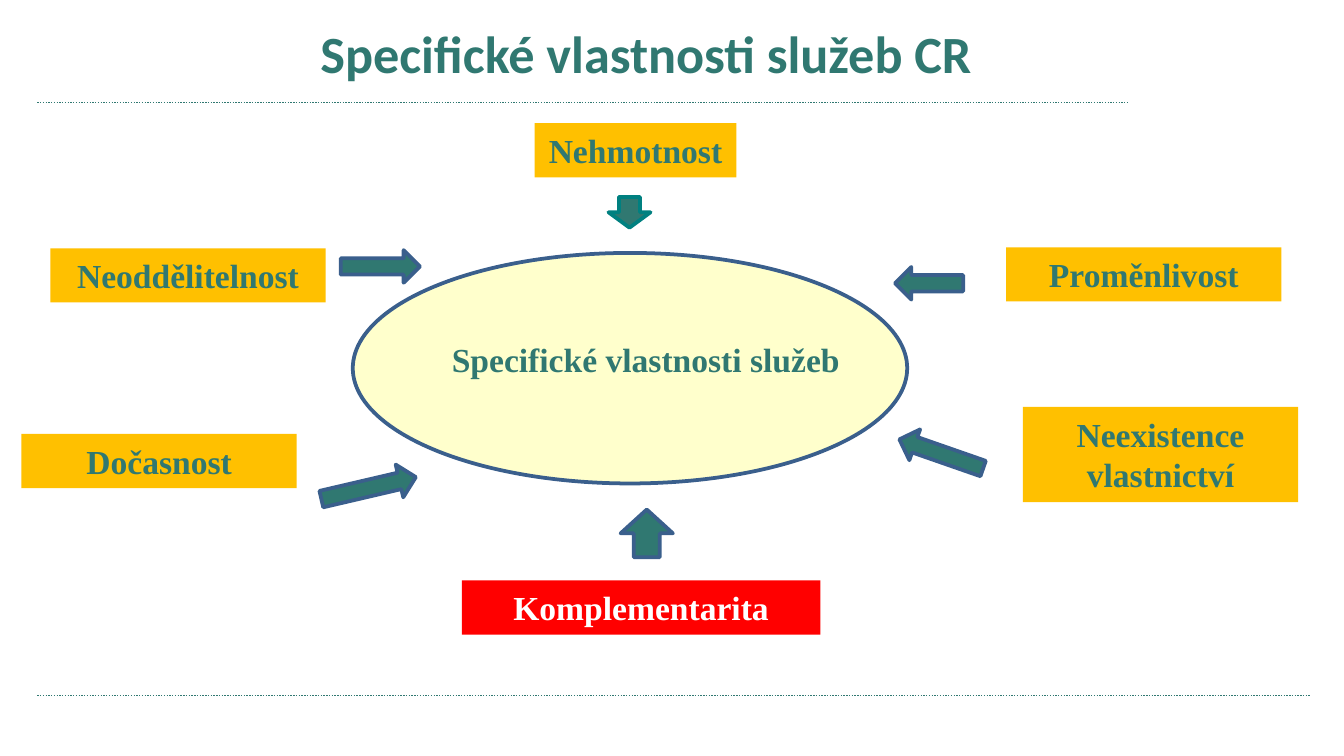
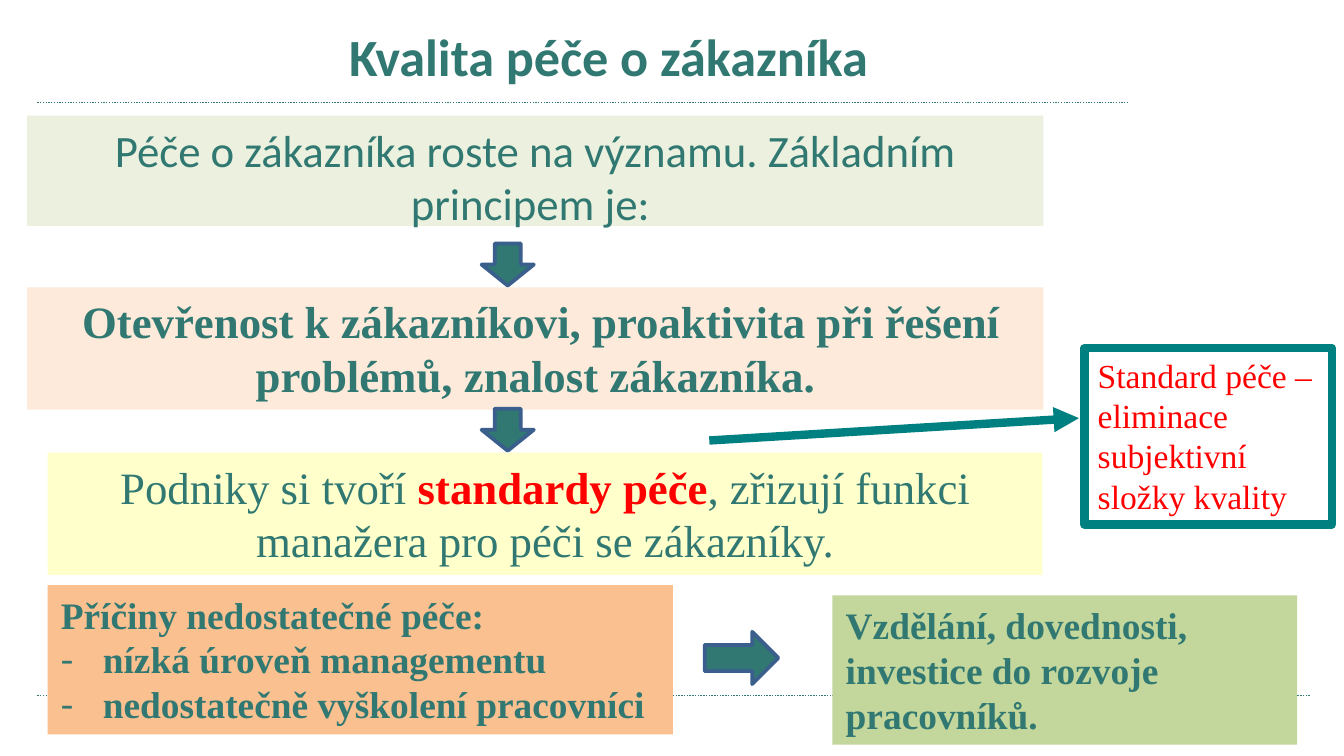
from lxml import etree
from pptx import Presentation
from pptx import util as u
from pptx.dml import color
from pptx.enum import dml, shapes, text
from pptx.oxml import ns

COLORS = {
    "green": "307871", "teal": "008080", "blue": "3A5F8C", "red": "FF0000",
    "white": "FFFFFF", "amber": "FFC000", "cream": "FFFFCC", "mint": "EBF1DE",
    "peach": "FDEADA", "orange": "FAC090", "lime": "C3D69B",
}
RGB = {name: color.RGBColor.from_string(value) for name, value in COLORS.items()}
SERIF, SANS = "Times New Roman", "Calibri"
CENTER, LEFT = text.PP_ALIGN.CENTER, text.PP_ALIGN.LEFT
SHAPE = shapes.MSO_SHAPE


def add_shape(page, kind, frame, fill=None, line=None, width=2, turn=0):
    shape = page.shapes.add_shape(kind, *(u.Pt(n) for n in frame))
    shape.shadow.inherit = False
    shape.rotation = turn
    if fill:
        shape.fill.solid()
        shape.fill.fore_color.rgb = RGB[fill]
    else:
        shape.fill.background()
    if line:
        shape.line.color.rgb = RGB[line]
        shape.line.width = u.Pt(width)
    else:
        shape.line.fill.background()
    return shape


def write(box, paragraphs, size, font=SERIF, align=CENTER, anchor=text.MSO_ANCHOR.TOP):
    """Each paragraph is a list of (words, colour, bold); a leading "-" makes it a bullet."""
    frame = box.text_frame
    frame.word_wrap = True
    frame.vertical_anchor = anchor
    for index, spans in enumerate(paragraphs):
        para = frame.paragraphs[0] if index == 0 else frame.add_paragraph()
        para.alignment = align
        if spans[0] == "-":
            spans = spans[1:]
            properties = para._p.get_or_add_pPr()
            properties.set("marL", str(u.Pt(22.5)))
            properties.set("indent", str(u.Pt(-22.5)))
            etree.SubElement(properties, ns.qn("a:buFont")).set("typeface", SERIF)
            etree.SubElement(properties, ns.qn("a:buChar")).set("char", "-")
        for words, ink, bold in spans:
            span = para.add_run()
            span.text = words
            span.font.name = font
            span.font.size = u.Pt(size)
            span.font.bold = bold
            span.font.color.rgb = RGB[ink]


deck = Presentation()
deck.slide_width, deck.slide_height = u.Pt(720), u.Pt(405)

# Shared frame: dotted rules and title
TITLES = [
    ("Specifické vlastnosti služeb CR", (145, 8, 402, 40)),
    ("Kvalita péče o zákazníka", (173, 10, 306, 40)),
]
pages = []
for title, frame in TITLES:
    page = deck.slides.add_slide(deck.slide_layouts[6])
    for right, y in [(604, 55), (702, 372.5)]:
        rule = page.shapes.add_connector(
            shapes.MSO_CONNECTOR.STRAIGHT, u.Pt(20), u.Pt(y), u.Pt(right), u.Pt(y))
        rule.line.color.rgb = RGB["green"]
        rule.line.width = u.Pt(0.75)
        rule.line.dash_style = dml.MSO_LINE.ROUND_DOT
        etree.SubElement(rule._element.spPr, ns.qn("a:effectLst"))
    box = page.shapes.add_textbox(*(u.Pt(n) for n in frame))
    write(box, [[(title, "green", True)]], 28, SANS, anchor=text.MSO_ANCHOR.MIDDLE)
    pages.append(page)
properties_page, care_page = pages

# Slide 1: properties around the central ellipse
add_shape(properties_page, SHAPE.OVAL, (189, 135.5, 297, 123.5), "cream", "blue")
box = properties_page.shapes.add_textbox(u.Pt(218), u.Pt(178), u.Pt(256), u.Pt(29))
write(box, [[("Specifické vlastnosti služeb", "green", True)]], 18)

PROPERTIES = [
    ("Nehmotnost", (286.5, 66, 108, 29), "amber", "green"),
    ("Neoddělitelnost", (27, 133, 147.5, 29), "amber", "green"),
    ("Proměnlivost", (539, 132.5, 147.5, 29), "amber", "green"),
    ("Dočasnost", (11.5, 232.5, 147.5, 29), "amber", "green"),
    ("Neexistence vlastnictví", (548, 218, 147.5, 51), "amber", "green"),
    ("Komplementarita", (247.5, 311, 192, 29), "red", "white"),
]
for name, frame, fill, ink in PROPERTIES:
    box = add_shape(properties_page, SHAPE.RECTANGLE, frame, fill)
    write(box, [[(name, ink, True)]], 18)

INWARD_ARROWS = [
    (SHAPE.DOWN_ARROW, (326, 105.5, 22.5, 16.5), "teal", 0),
    (SHAPE.RIGHT_ARROW, (182.5, 134, 42.5, 17.5), "blue", 0),
    (SHAPE.RIGHT_ARROW, (171.5, 252.5, 52, 18), "blue", -13.1),
    (SHAPE.LEFT_ARROW, (479.5, 143, 36.5, 17.5), "blue", 0),
    (SHAPE.LEFT_ARROW, (480.5, 234.5, 47.5, 17.5), "blue", 19.2),
    (SHAPE.UP_ARROW, (332.5, 273, 28, 25.5), "blue", 0),
]
for kind, frame, line, turn in INWARD_ARROWS:
    add_shape(properties_page, kind, frame, "green", line, turn=turn)

# Slide 2: steps of customer care
CARE_BOXES = [
    ((14.5, 62, 544.5, 59), "mint", 24, SANS, CENTER, [
        [("Péče o zákazníka roste na významu. Základním principem je: ", "green", False)]]),
    ((14.5, 154, 544.5, 65.5), "peach", 24, SERIF, CENTER, [
        [(" Otevřenost k zákazníkovi, proaktivita při řešení problémů, znalost zákazníka.",
          "green", True)]]),
    ((25.5, 242.5, 533, 65.5), "cream", 24, SERIF, CENTER, [
        [("Podniky si tvoří ", "green", False), ("standardy péče", "red", True),
         (", zřizují funkci manažera pro péči se zákazníky.", "green", False)]]),
    ((25.5, 313.5, 335, 80), "orange", 20, SERIF, LEFT, [
        [("Příčiny nedostatečné péče:", "green", True)],
        ["-", ("nízká úroveň managementu", "green", True)],
        ["-", ("nedostatečně vyškolení pracovníci", "green", True)]]),
    ((446, 319, 249, 80), "lime", 20, SERIF, LEFT, [
        [("Vzdělání, dovednosti, investice do rozvoje pracovníků.", "green", True)]]),
]
for frame, fill, size, font, align, paragraphs in CARE_BOXES:
    box = add_shape(care_page, SHAPE.RECTANGLE, frame, fill)
    write(box, paragraphs, size, font, align)

for kind, frame in [
    (SHAPE.DOWN_ARROW, (258, 130.5, 28, 22.5)),
    (SHAPE.DOWN_ARROW, (258, 219, 28, 22.5)),
    (SHAPE.RIGHT_ARROW, (377.5, 338.5, 39.5, 28)),
]:
    add_shape(care_page, kind, frame, "green", "blue")

# Side note on the care standard, with its pointer
note = add_shape(care_page, SHAPE.RECTANGLE, (581, 186.5, 132.5, 94.5), None, "teal", 4.5)
write(note, [[("Standard péče – eliminace subjektivní složky kvality", "red", False)]],
      18, align=LEFT)
pointer = care_page.shapes.add_connector(
    shapes.MSO_CONNECTOR.STRAIGHT, u.Pt(380), u.Pt(236), u.Pt(578), u.Pt(224))
pointer.line.color.rgb = RGB["teal"]
pointer.line.width = u.Pt(4.5)
etree.SubElement(pointer.line._get_or_add_ln(), ns.qn("a:tailEnd")).set("type", "triangle")
etree.SubElement(pointer._element.spPr, ns.qn("a:effectLst"))

deck.save("out.pptx")
